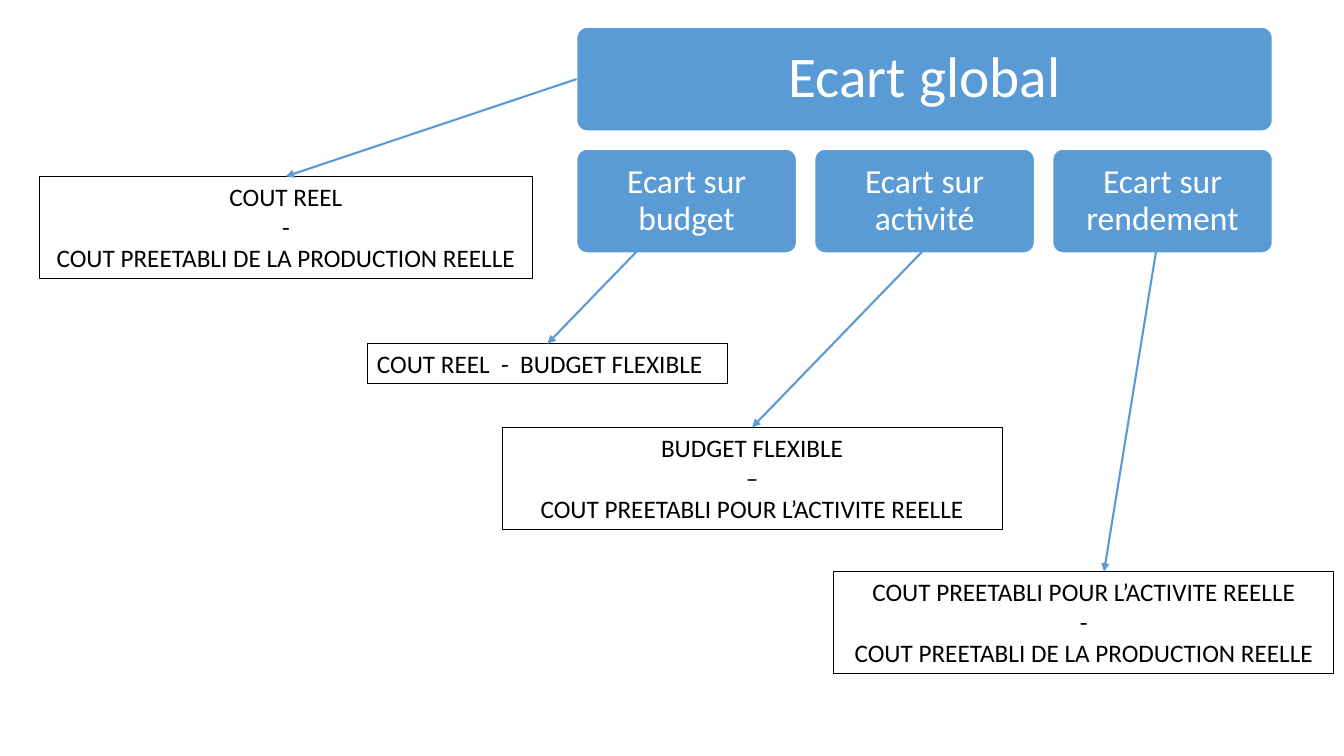
from lxml.etree import SubElement
from pptx import Presentation
from pptx.dml.color import RGBColor
from pptx.enum.shapes import MSO_CONNECTOR as Connector, MSO_SHAPE as Shape
from pptx.enum.text import MSO_ANCHOR as Anchor, MSO_AUTO_SIZE as AutoSize, PP_ALIGN as Align
from pptx.oxml.ns import qn
from pptx.util import Inches, Pt

BLUE, WHITE, BLACK = "5B9BD5", "FFFFFF", "000000"
TOP, LEFT = 0, 1


def paint(color_format, color):
    color_format.rgb = RGBColor.from_string(color)


def outline(line, color, width):
    line.fill.solid()
    paint(line.fill.fore_color, color)
    line.width = Pt(width)


def write(paragraph, text, size, color, align):
    paragraph.alignment = align
    run = paragraph.add_run()
    run.text = text
    run.font.name = "Calibri"
    run.font.size = Pt(size)
    paint(run.font.color, color)


def add_variance(slide, left, top, width, height, label, size, inset):
    node = slide.shapes.add_shape(
        Shape.ROUNDED_RECTANGLE, Inches(left), Inches(top), Inches(width), Inches(height))
    node.adjustments[0] = 0.1
    node.shadow.inherit = False
    node.fill.solid()
    paint(node.fill.fore_color, BLUE)
    outline(node.line, WHITE, 1)
    frame = node.text_frame
    frame.word_wrap = True
    frame.vertical_anchor = Anchor.MIDDLE
    frame.margin_left = frame.margin_right = Inches(inset)
    frame.margin_top = frame.margin_bottom = Inches(inset)
    write(frame.paragraphs[0], label, size, WHITE, Align.CENTER)
    frame.paragraphs[0].line_spacing = 0.9
    return node


def add_hierarchy(slide, left, top, width, height):
    gap = 0.18
    row_height = (height - gap) / 2
    global_node = add_variance(slide, left, top, width, row_height, "Ecart global", 41, 0.2)
    labels = ["Ecart sur budget", "Ecart sur activité", "Ecart sur rendement"]
    column = (width - gap * (len(labels) - 1)) / len(labels)
    for index, label in enumerate(labels):
        add_variance(slide, left + index * (column + gap), top + row_height + gap,
                     column, row_height, label, 24, 0.13)
    return global_node


def add_formula(slide, left, top, width, height, terms, align=Align.CENTER):
    formula = slide.shapes.add_textbox(
        Inches(left), Inches(top), Inches(width), Inches(height))
    outline(formula.line, BLACK, 0.75)
    frame = formula.text_frame
    frame.word_wrap = True
    frame.auto_size = AutoSize.SHAPE_TO_FIT_TEXT
    for index, term in enumerate(terms):
        paragraph = frame.add_paragraph() if index else frame.paragraphs[0]
        write(paragraph, term, 18, BLACK, align)
    return formula


def add_arrow(slide, start, end):
    arrow = slide.shapes.add_connector(
        Connector.STRAIGHT, *(Inches(value) for value in (*start, *end)))
    outline(arrow.line, BLUE, 1.5)
    SubElement(arrow.line._get_or_add_ln(), qn("a:tailEnd"), type="triangle")
    SubElement(arrow._element.spPr, qn("a:effectLst"))
    return arrow


def build_variance_slide(slide):
    global_node = add_hierarchy(slide, 5.72, 0.27, 6.9, 2.24)

    budget = add_formula(slide, 3.64, 3.41, 3.58, 0.4,
                         ["COUT REEL  -  BUDGET FLEXIBLE"], Align.LEFT)
    add_arrow(slide, (6.32, 2.49), (5.43, 3.41)).end_connect(budget, TOP)

    activity = add_formula(slide, 4.98, 4.24, 4.96, 1.01, [
        "BUDGET FLEXIBLE", "–", "COUT PREETABLI POUR L’ACTIVITE REELLE"])
    add_arrow(slide, (9.21, 2.43), (7.46, 4.24)).end_connect(activity, TOP)

    add_formula(slide, 8.27, 5.67, 4.96, 1.01, [
        "COUT PREETABLI POUR L’ACTIVITE REELLE", "-",
        "COUT PREETABLI DE LA PRODUCTION REELLE"])
    add_arrow(slide, (11.47, 2.47), (10.95, 5.67))

    overall = add_formula(slide, 0.39, 1.75, 4.89, 1.01, [
        "COUT REEL", "-", "COUT PREETABLI DE LA PRODUCTION REELLE"])
    overall_arrow = add_arrow(slide, (5.72, 0.82), (2.83, 1.75))
    overall_arrow.begin_connect(global_node, LEFT)
    overall_arrow.end_connect(overall, TOP)


def main():
    deck = Presentation()
    deck.slide_width = Inches(13.33)
    deck.slide_height = Inches(7.5)
    build_variance_slide(deck.slides.add_slide(deck.slide_layouts[6]))
    deck.save("out.pptx")


if __name__ == "__main__":
    main()
